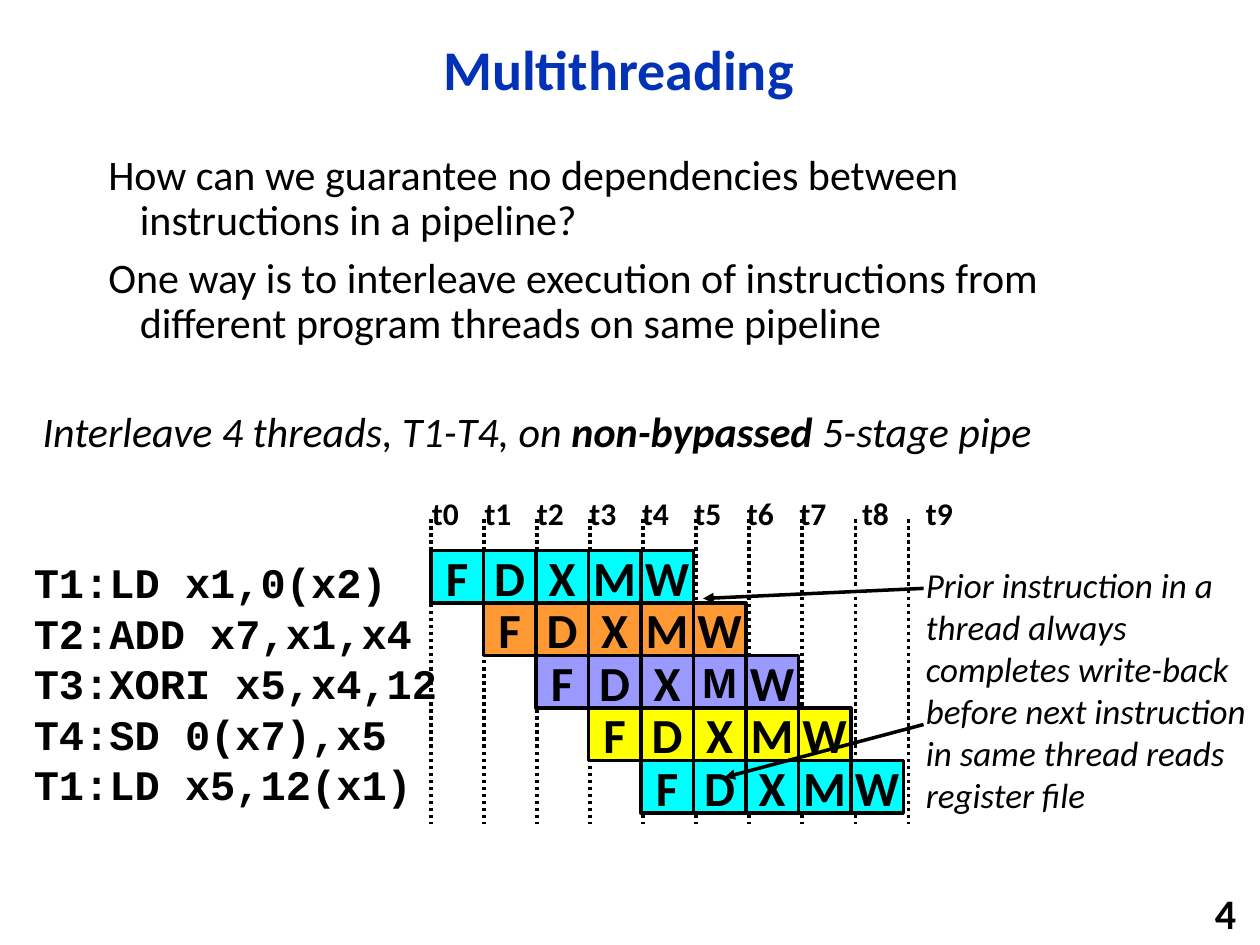
import dataclasses

import lxml.etree
import pptx
import pptx.dml.color
import pptx.enum.dml
import pptx.enum.shapes
import pptx.enum.text
import pptx.oxml.ns
import pptx.util

Inches = pptx.util.Inches
Pt = pptx.util.Pt
Align = pptx.enum.text.PP_ALIGN
Anchor = pptx.enum.text.MSO_ANCHOR
AutoSize = pptx.enum.text.MSO_AUTO_SIZE


@dataclasses.dataclass(frozen=True)
class Theme:
    black: str = "000000"
    title_blue: str = "0332B7"
    cyan: str = "00FFFF"
    orange: str = "FF9933"
    violet: str = "9999FF"
    yellow: str = "FFFF00"
    font: str = "Calibri"
    code_font: str = "Courier New"
    stage_font: str = "Arial"
    title_size: int = 32
    stage_size: int = 28
    body_size: int = 24
    note_size: int = 20
    label_size: int = 18
    line_width: int = 2


@dataclasses.dataclass(frozen=True)
class Instruction:
    code: str
    color: str


THEME = Theme()
STAGES = "FDXMW"
INSTRUCTIONS = [
    Instruction("T1:LD x1,0(x2)", THEME.cyan),
    Instruction("T2:ADD x7,x1,x4", THEME.orange),
    Instruction("T3:XORI x5,x4,12", THEME.violet),
    Instruction("T4:SD 0(x7),x5", THEME.yellow),
    Instruction("T1:LD x5,12(x1)", THEME.cyan),
]
SMALL_STAGE = (2, 3)  # row and stage of the one cell with smaller lettering
CELL = 5 / 12
GRID_LEFT, GRID_TOP = 3.42, 4.37
CYCLES = 10
CYCLE_LINE_GAP = 0.421
LABEL_NUDGES = {8: 0.08, 9: 0.17}


def rgb(color: str) -> pptx.dml.color.RGBColor:
    return pptx.dml.color.RGBColor.from_string(color)


def write_text(shape, lines: list[str], *, size: int = THEME.body_size, font: str = THEME.font,
               color: str = THEME.black, bold: bool = False, italic: bool = False,
               emphasis: str = "", align=Align.LEFT, anchor=Anchor.TOP, wrap: bool = True,
               auto_size=AutoSize.NONE, line_spacing: float = 1.0, space_before: float = 0) -> None:
    """Fill a shape with one paragraph per line; the emphasis part is set in bold."""
    frame = shape.text_frame
    frame.word_wrap = wrap
    frame.auto_size = auto_size
    frame.vertical_anchor = anchor
    for index, line in enumerate(lines):
        paragraph = frame.paragraphs[0] if index == 0 else frame.add_paragraph()
        paragraph.alignment = align
        paragraph.line_spacing = line_spacing
        paragraph.space_before = Pt(space_before)
        parts = line.partition(emphasis) if emphasis else (line,)
        for part in parts:
            if not part:
                continue
            run = paragraph.add_run()
            run.text = part
            run.font.name = font
            run.font.size = Pt(size)
            run.font.bold = bold or part == emphasis
            run.font.italic = italic
            run.font.color.rgb = rgb(color)


def add_text(slide, left: float, top: float, width: float, height: float,
             lines: list[str], **text_format) -> None:
    box = slide.shapes.add_textbox(Inches(left), Inches(top), Inches(width), Inches(height))
    write_text(box, lines, **text_format)


def place(shape, left: float, top: float, width: float, height: float) -> None:
    shape.left, shape.top = Inches(left), Inches(top)
    shape.width, shape.height = Inches(width), Inches(height)


def add_line(slide, start: tuple[float, float], end: tuple[float, float], *,
             dotted: bool = False, arrow: bool = False) -> None:
    points = [Inches(length) for length in (*start, *end)]
    connector = slide.shapes.add_connector(pptx.enum.shapes.MSO_CONNECTOR.STRAIGHT, *points)
    connector.line.color.rgb = rgb(THEME.black)
    connector.line.width = Pt(THEME.line_width)
    if dotted:
        connector.line.dash_style = pptx.enum.dml.MSO_LINE.ROUND_DOT
    if arrow:
        lxml.etree.SubElement(connector.line._get_or_add_ln(),
                              pptx.oxml.ns.qn("a:tailEnd"), type="triangle")
    lxml.etree.SubElement(connector._element.spPr, pptx.oxml.ns.qn("a:effectLst"))


def add_stage(slide, row: int, stage: int, color: str) -> None:
    left = GRID_LEFT + (row + stage) * CELL
    top = GRID_TOP + row * CELL
    cell = slide.shapes.add_shape(pptx.enum.shapes.MSO_SHAPE.RECTANGLE, Inches(left),
                                  Inches(top), Inches(CELL), Inches(CELL))
    cell.shadow.inherit = False
    cell.fill.solid()
    cell.fill.fore_color.rgb = rgb(color)
    cell.line.color.rgb = rgb(THEME.black)
    cell.line.width = Pt(THEME.line_width)
    small = (row, stage) == SMALL_STAGE
    write_text(cell, [STAGES[stage]], bold=True, align=Align.CENTER, anchor=Anchor.MIDDLE,
               wrap=False, size=THEME.body_size if small else THEME.stage_size,
               font=THEME.stage_font if small else THEME.font)


def fill_placeholders(slide) -> None:
    title, body = slide.shapes.title, slide.placeholders[1]
    place(title, 0.92, 0.17, 7.98, 0.81)
    write_text(title, ["Multithreading"], size=THEME.title_size, color=THEME.title_blue,
               bold=True, align=Align.CENTER, anchor=Anchor.MIDDLE, line_spacing=0.9)
    place(body, 0.76, 1.17, 8.4, 5.53)
    write_text(body, [
        "How can we guarantee no dependencies between instructions in a pipeline?",
        "One way is to interleave execution of instructions from different program threads"
        " on same pipeline",
    ], line_spacing=0.9, space_before=0.3 * THEME.body_size)
    for paragraph in body.text_frame.paragraphs:
        properties = paragraph._p.get_or_add_pPr()
        properties.set("marL", str(Inches(0.25)))
        properties.set("indent", str(Inches(-0.25)))
        lxml.etree.SubElement(properties, pptx.oxml.ns.qn("a:buNone"))


def draw_pipeline(slide) -> None:
    for cycle in range(CYCLES):
        x = GRID_LEFT + cycle * CYCLE_LINE_GAP
        add_line(slide, (x, 4.12), (x, 6.54), dotted=True)
    for row, instruction in enumerate(INSTRUCTIONS):
        for stage in range(len(STAGES)):
            add_stage(slide, row, stage, instruction.color)
    for cycle in range(CYCLES):
        left = 3.33 + cycle * CELL + LABEL_NUDGES.get(cycle, 0)
        add_text(slide, left, 3.87, 0.42, 0.4, [f"t{cycle}"], size=THEME.label_size,
                 bold=True, wrap=False, auto_size=AutoSize.SHAPE_TO_FIT_TEXT)
    add_text(slide, 0.17, 4.37, 3.43, 2.12, [instruction.code for instruction in INSTRUCTIONS],
             font=THEME.code_font, bold=True, wrap=False,
             auto_size=AutoSize.SHAPE_TO_FIT_TEXT)


def add_notes_on_pipeline(slide) -> None:
    add_text(slide, 0.24, 3.17, 8.18, 0.51,
             ["Interleave 4 threads, T1-T4, on non-bypassed 5-stage pipe"], italic=True,
             emphasis="non-bypassed ", wrap=False, auto_size=AutoSize.SHAPE_TO_FIT_TEXT)
    add_text(slide, 7.25, 4.42, 2.75, 2.12,
             ["Prior instruction in a thread always completes write-back before next"
              " instruction in same thread reads register file"],
             size=THEME.note_size, italic=True, auto_size=AutoSize.SHAPE_TO_FIT_TEXT)
    add_line(slide, (7.33, 4.67), (5.58, 4.75), arrow=True)
    add_line(slide, (7.33, 5.75), (5.75, 6.17), arrow=True)


def main() -> None:
    presentation = pptx.Presentation()
    presentation.slide_width, presentation.slide_height = Inches(10), Inches(7.5)
    slide = presentation.slides.add_slide(presentation.slide_layouts[1])
    fill_placeholders(slide)
    add_text(slide, 7.83, 7.08, 2.08, 0.32, ["4"], bold=True, align=Align.RIGHT,
             anchor=Anchor.MIDDLE, wrap=False)
    draw_pipeline(slide)
    add_notes_on_pipeline(slide)
    presentation.save("out.pptx")


if __name__ == "__main__":
    main()
